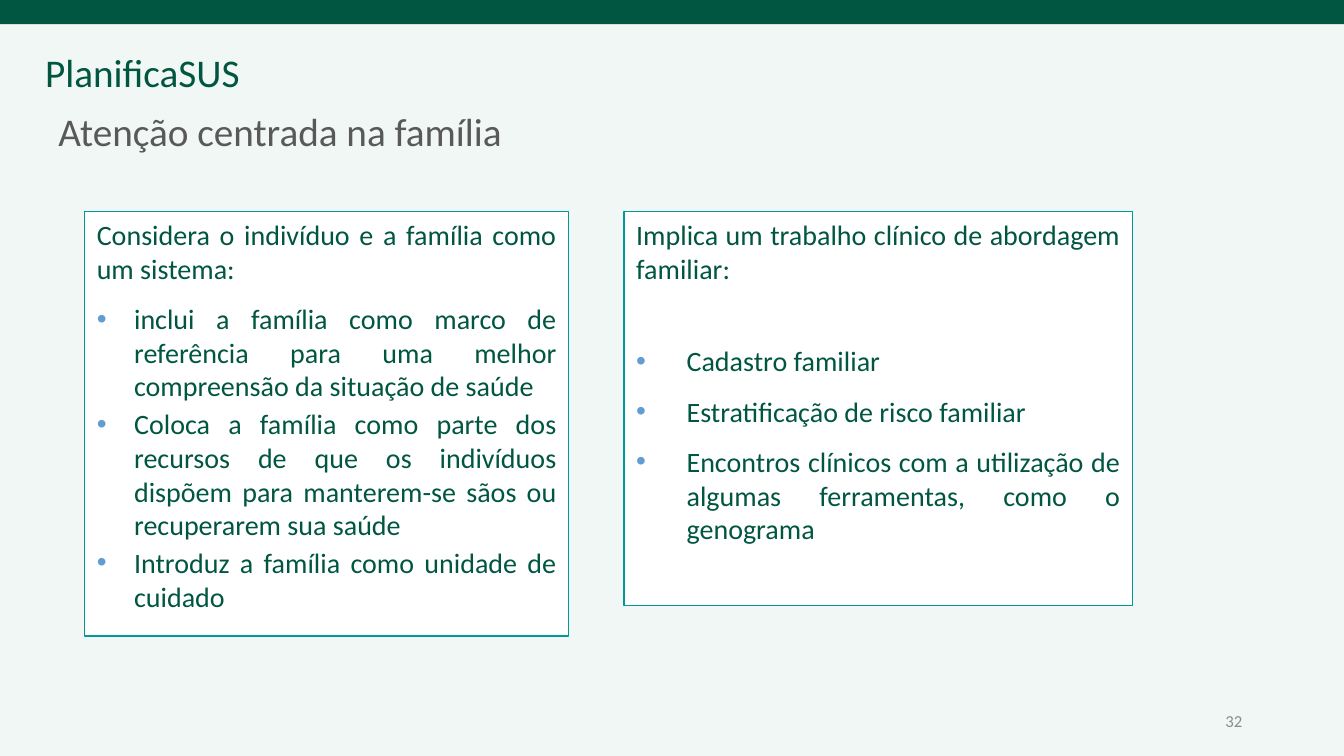
"""Build the slide on family-centred care."""
from dataclasses import dataclass

from lxml.etree import SubElement
from pptx import Presentation
from pptx.dml.color import RGBColor
from pptx.enum.shapes import MSO_SHAPE as Shape
from pptx.enum.text import MSO_ANCHOR as Anchor, MSO_AUTO_SIZE as AutoSize, PP_ALIGN as Align
from pptx.oxml.ns import qn
from pptx.util import Inches, Pt

GREEN = RGBColor(0x01, 0x56, 0x41)
TEAL = RGBColor(0x00, 0x99, 0x99)
BLUE = RGBColor(0x62, 0x9D, 0xD1)
DARK_GRAY = RGBColor(0x59, 0x59, 0x59)
LIGHT_GRAY = RGBColor(0x8C, 0x8C, 0x8C)
WHITE = RGBColor(0xFF, 0xFF, 0xFF)
PALE_GREEN = RGBColor(0xF1, 0xF7, 0xF4)
FONT = "Calibri"


@dataclass(frozen=True)
class Item:
    text: str
    space_before: float


@dataclass(frozen=True)
class Panel:
    left: float
    width: float
    height: float
    indent: float
    heading: str
    items: tuple[Item, ...]


PANEL_TOP = 2.1
PANELS = (
    Panel(0.84, 4.8, 4.21, 0.37, "Considera o indivíduo e a família como um sistema:", (
        Item("inclui a família como marco de referência para uma melhor "
             "compreensão da situação de saúde", 12),
        Item("Coloca a família como parte dos recursos de que os indivíduos "
             "dispõem para manterem-se sãos ou recuperarem sua saúde", 3),
        Item("Introduz a família como unidade de cuidado", 3),
    )),
    Panel(6.19, 5.04, 3.91, 0.5, "Implica um trabalho clínico de abordagem familiar:", (
        Item("Cadastro familiar", 42),
        Item("Estratificação de risco familiar", 12),
        Item("Encontros clínicos com a utilização de algumas ferramentas, "
             "como o genograma", 12),
    )),
)


def add_span(para, text: str, size: float, color: RGBColor) -> None:
    span = para.add_run()
    span.text = text
    span.font.name = FONT
    span.font.size = Pt(size)
    span.font.color.rgb = color


def add_bullet(para, indent: float) -> None:
    properties = para._p.get_or_add_pPr()
    properties.set("marL", str(Inches(indent)))
    properties.set("indent", str(-Inches(indent)))
    color = SubElement(properties, qn("a:buClr"))
    SubElement(color, qn("a:srgbClr"), val=str(BLUE))
    SubElement(properties, qn("a:buFont"), typeface="Arial")
    SubElement(properties, qn("a:buChar"), char="•")


def add_box(page, left: float, top: float, width: float, height: float,
            fill: RGBColor):
    box = page.shapes.add_shape(Shape.RECTANGLE, Inches(left), Inches(top),
                                Inches(width), Inches(height))
    box.shadow.inherit = False
    box.fill.solid()
    box.fill.fore_color.rgb = fill
    box.line.fill.background()
    return box


def add_panel(page, panel: Panel) -> None:
    box = add_box(page, panel.left, PANEL_TOP, panel.width, panel.height, WHITE)
    box.line.color.rgb = TEAL
    box.line.width = Pt(1)
    frame = box.text_frame
    frame.word_wrap = True
    frame.vertical_anchor = Anchor.TOP
    frame.margin_left = frame.margin_right = Inches(0.12)
    frame.margin_top = frame.margin_bottom = Inches(0.06)
    heading = frame.paragraphs[0]
    heading.alignment = Align.JUSTIFY
    add_span(heading, panel.heading, 20, GREEN)
    for item in panel.items:
        para = frame.add_paragraph()
        para.alignment = Align.JUSTIFY
        para.space_before = Pt(item.space_before)
        add_bullet(para, panel.indent)
        add_span(para, item.text, 20, GREEN)


def add_label(page, left: float, top: float, width: float, height: float,
              text: str, size: float, color: RGBColor):
    box = page.shapes.add_textbox(Inches(left), Inches(top), Inches(width), Inches(height))
    add_span(box.text_frame.paragraphs[0], text, size, color)
    return box.text_frame


def format_title(title) -> None:
    title.left, title.top = Inches(0.48), Inches(1.07)
    title.width, title.height = Inches(10.99), Inches(1.45)
    frame = title.text_frame
    frame.word_wrap = True
    frame.auto_size = AutoSize.NONE
    frame.vertical_anchor = Anchor.TOP
    para = frame.paragraphs[0]
    para.alignment = Align.LEFT
    para.line_spacing = 0.9
    add_span(para, "Atenção centrada na família", 28, DARK_GRAY)


def main() -> None:
    deck = Presentation()
    deck.slide_width, deck.slide_height = Inches(13.33), Inches(7.5)
    page = deck.slides.add_slide(deck.slide_layouts[5])
    page.background.fill.solid()
    page.background.fill.fore_color.rgb = PALE_GREEN
    add_box(page, 0, 0, 13.33, 0.24, GREEN)
    add_label(page, 0.35, 0.43, 2.15, 0.57, "PlanificaSUS", 28, GREEN)
    number = add_label(page, 9.42, 6.95, 3, 0.4, "32", 12, LIGHT_GRAY)
    number.word_wrap = True
    number.vertical_anchor = Anchor.MIDDLE
    number.paragraphs[0].alignment = Align.RIGHT
    for panel in PANELS:
        add_panel(page, panel)
    format_title(page.shapes.title)
    deck.save("out.pptx")


if __name__ == "__main__":
    main()
